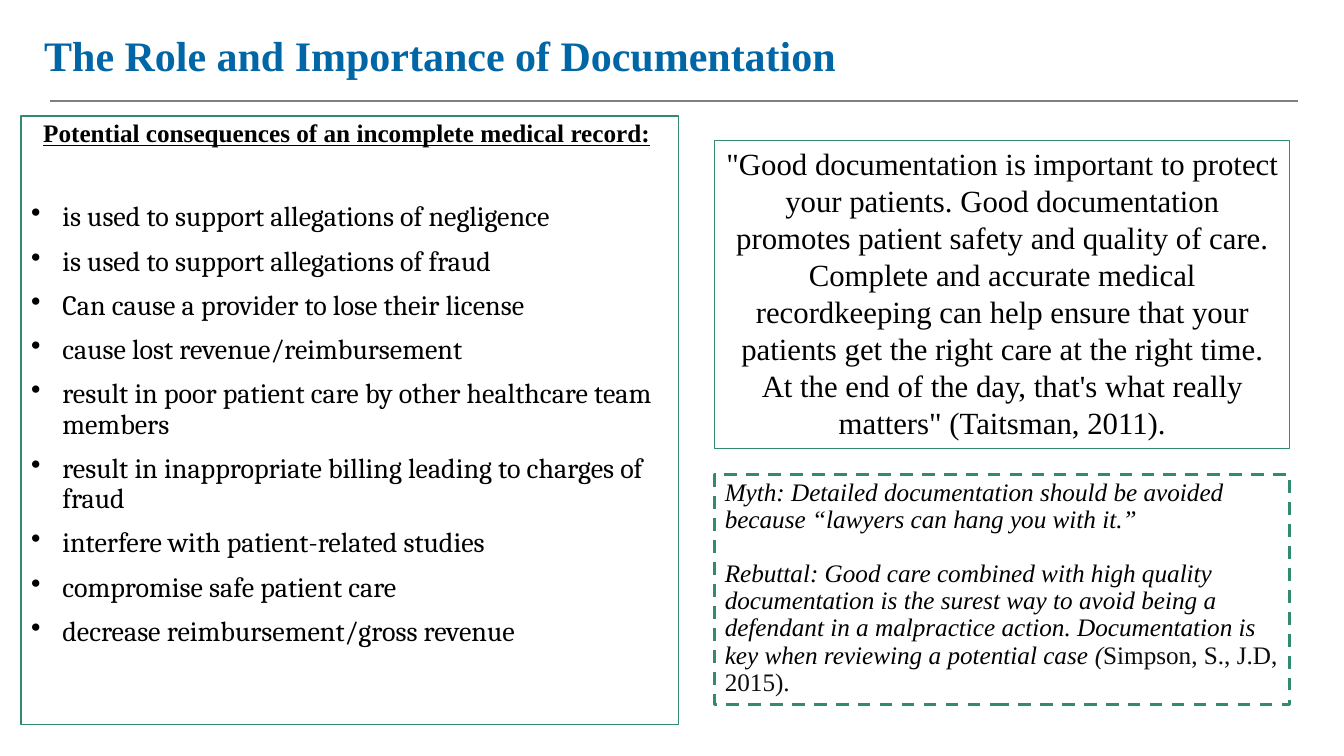
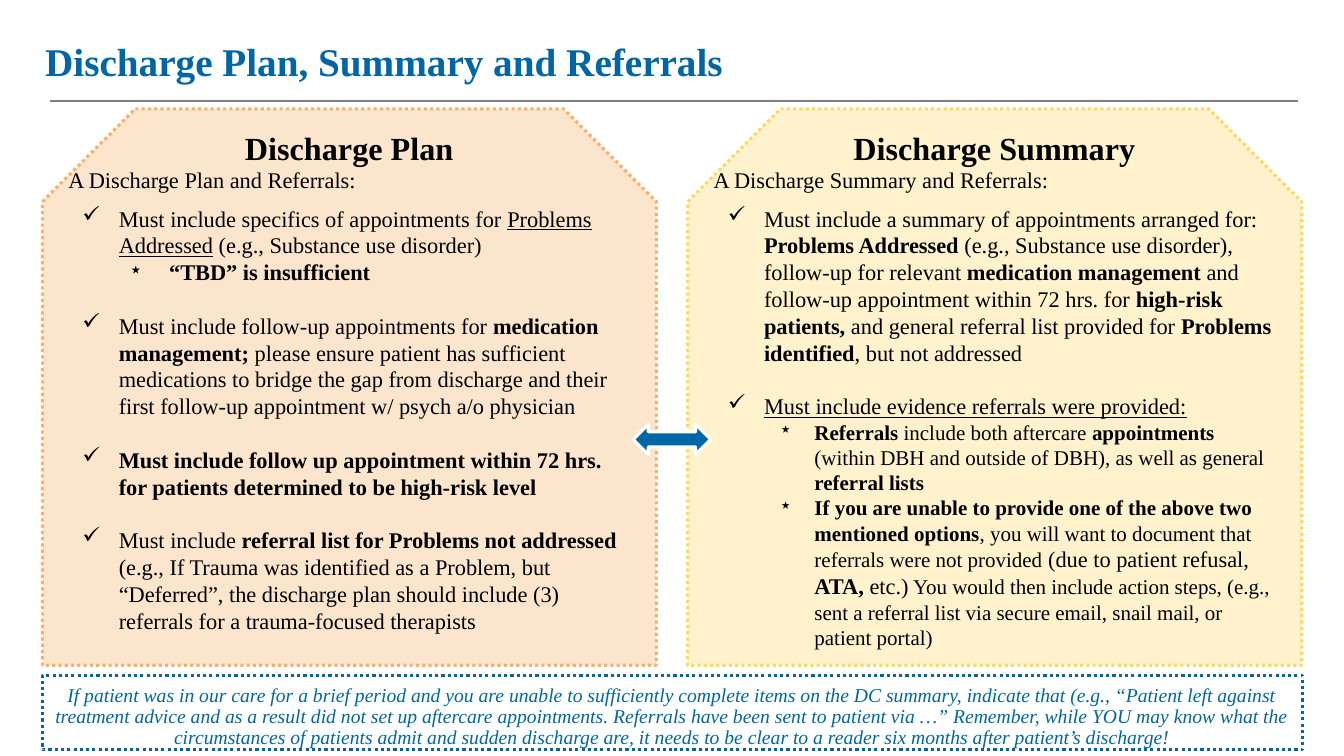
"""Build two slides on clinical documentation and discharge planning."""
from collections import namedtuple
from dataclasses import dataclass

from lxml import etree
from pptx import Presentation
from pptx.dml.color import RGBColor
from pptx.enum.dml import MSO_LINE
from pptx.enum.shapes import MSO_CONNECTOR, MSO_SHAPE
from pptx.enum.text import MSO_ANCHOR, PP_ALIGN
from pptx.oxml.ns import qn
from pptx.util import Inches, Pt

Box = namedtuple("Box", "left top width height")
Run = namedtuple("Run", "text marks size", defaults=("", None))


@dataclass(frozen=True)
class Theme:
    """Colours, fonts and type sizes of the deck."""
    blue: str = "0066A6"
    green: str = "328B71"
    gray: str = "7F7F7F"
    black: str = "000000"
    near_black: str = "0D0D0D"
    white: str = "FFFFFF"
    peach: str = "FCE5CD"
    orange: str = "F6B26B"
    cream: str = "FFF2CC"
    yellow: str = "FFD966"
    serif: str = "Times New Roman"
    list_font: str = "Cambria"
    panel_title: int = 23
    quote: int = 22
    consequence: int = 20
    subhead: int = 18
    body: int = 16
    detail: int = 15
    note: int = 14


@dataclass(frozen=True)
class Para:
    """One paragraph: its runs, type and spacing."""
    runs: tuple
    size: int
    font: str = "Times New Roman"
    color: str = "000000"
    bullet: str = ""
    margin: float = 0
    hanging: float = 0
    level: int = 0
    before: float = 0
    spacing: float = 1.0
    align: PP_ALIGN = PP_ALIGN.LEFT


THEME = Theme()


def rgb(code):
    """Turn a hex code into a colour."""
    return RGBColor.from_string(code)


def place(box):
    """Turn a box in inches into lengths."""
    return [Inches(side) for side in box]


def add_bullet(props, mark):
    """Give paragraph properties a black bullet character."""
    tint = etree.SubElement(props, qn("a:buClr"))
    etree.SubElement(tint, qn("a:srgbClr"), val=THEME.black)
    etree.SubElement(props, qn("a:buChar"), char=mark)


def write(frame, paras, inset=0.05, anchor=MSO_ANCHOR.TOP):
    """Fill a text frame with paragraphs, run by run."""
    frame.word_wrap = True
    frame.vertical_anchor = anchor
    frame.margin_left = frame.margin_right = Inches(0.1)
    frame.margin_top = frame.margin_bottom = Inches(inset)
    for index, para in enumerate(paras):
        line = frame.add_paragraph() if index else frame.paragraphs[0]
        line.alignment = para.align
        line.level = para.level
        line.line_spacing = para.spacing
        line.space_before = Pt(para.before)
        props = line._p.get_or_add_pPr()
        props.set("marL", str(Inches(para.margin)))
        props.set("indent", str(-Inches(para.hanging)))
        if para.bullet:
            add_bullet(props, para.bullet)
        for piece in para.runs:
            run = line.add_run()
            run.text = piece.text
            font = run.font
            font.name = para.font
            font.size = Pt(piece.size or para.size)
            font.bold = "b" in piece.marks
            font.italic = "i" in piece.marks
            font.underline = "u" in piece.marks
            font.color.rgb = rgb(THEME.near_black if "n" in piece.marks else para.color)


def add_figure(slide, kind, box, edge, weight, dash=None, fill=None):
    """Add a shadowless preset shape with an outline."""
    figure = slide.shapes.add_shape(kind, *place(box))
    figure.shadow.inherit = False
    if fill:
        figure.fill.solid()
        figure.fill.fore_color.rgb = rgb(fill)
    else:
        figure.fill.background()
    figure.line.color.rgb = rgb(edge)
    figure.line.width = Pt(weight)
    if dash:
        figure.line.dash_style = dash
    return figure


def add_text(slide, box, paras, **options):
    """Add a plain text box."""
    write(slide.shapes.add_textbox(*place(box)).text_frame, paras, **options)


def start_slide(deck, title, box, size):
    """Add a blank slide with the header rule and a title."""
    slide = deck.slides.add_slide(deck.slide_layouts[6])
    rule = slide.shapes.add_connector(
        MSO_CONNECTOR.STRAIGHT, Inches(12.87), Inches(1), Inches(0.5), Inches(1))
    rule.line.color.rgb = rgb(THEME.gray)
    rule.line.width = Pt(1.5)
    etree.SubElement(rule._element.spPr, qn("a:effectLst"))
    heading = Para((Run(title, "b"),), size, color=THEME.blue, spacing=0.9)
    add_text(slide, box, [heading], anchor=MSO_ANCHOR.MIDDLE)
    return slide


def add_consequences(slide, box, heading, items):
    """Add the framed list of consequences."""
    frame = add_figure(slide, MSO_SHAPE.RECTANGLE, box, THEME.green, 1).text_frame
    paras = [Para((Run(heading, "bu"),), THEME.subhead, margin=0.5, hanging=0.38, spacing=0.9)]
    for index, item in enumerate(items):
        paras.append(Para((Run(item),), THEME.consequence, THEME.list_font, bullet="•",
                          margin=0.31, hanging=0.31, spacing=0.9,
                          before=10 if index else 39))
    write(frame, paras)


def add_quote(slide, box, quote):
    """Add the framed, centred quotation."""
    frame = add_figure(slide, MSO_SHAPE.RECTANGLE, box, THEME.green, 0.75).text_frame
    write(frame, [Para((Run(quote),), THEME.quote, align=PP_ALIGN.CENTER)])


def add_myth(slide, box, myth, rebuttal):
    """Add the dashed box with a myth and its rebuttal."""
    frame = add_figure(slide, MSO_SHAPE.RECTANGLE, box, THEME.green, 2.25, MSO_LINE.DASH).text_frame
    write(frame, [Para((Run(myth, "i"),), THEME.subhead, spacing=0.9),
                  Para(rebuttal, THEME.subhead, spacing=0.9, before=19)])


def check(*runs, before=19):
    """Make a ticked requirement."""
    return Para(runs, THEME.body, bullet="✓", margin=0.5, hanging=0.36, before=before)


def star(*runs, size, hanging):
    """Make a starred detail under a requirement."""
    return Para(runs, size, bullet="⋆", margin=1, hanging=hanging, level=1)


def add_panel(slide, box, fill, edge, title, lead, requirements):
    """Add a snipped panel with its title, lead line and requirements."""
    panel = add_figure(slide, MSO_SHAPE.SNIP_2_SAME_RECTANGLE, box, edge, 2.25,
                       MSO_LINE.ROUND_DOT, fill)
    panel.adjustments[0] = 0.167
    panel.adjustments[1] = 0
    inner = Box(box.left + 0.16, box.top + 0.09, box.width - 0.32, box.height - 0.19)
    opening = [Para((Run(title, "b"),), THEME.panel_title, align=PP_ALIGN.CENTER),
               Para((Run(lead),), THEME.body)]
    add_text(slide, inner, opening + requirements, inset=0.1)


def add_note(slide, box, note):
    """Add the dotted note along the bottom."""
    frame = add_figure(slide, MSO_SHAPE.RECTANGLE, box, THEME.blue, 2.25,
                       MSO_LINE.ROUND_DOT).text_frame
    write(frame, [Para((Run(note, "i"),), THEME.note, color=THEME.blue, spacing=0.9,
                       align=PP_ALIGN.CENTER)], inset=0.1)


def build_documentation(deck):
    """Build the slide on the importance of documentation."""
    slide = start_slide(deck, "The Role and Importance of Documentation",
                        Box(0.34, 0.17, 10.38, 0.8), 30)
    add_consequences(slide, Box(0.21, 1.15, 6.52, 6.04),
                     "Potential consequences of an incomplete medical record:", [
                         "is used to support allegations of negligence",
                         "is used to support allegations of fraud",
                         "Can cause a provider to lose their license",
                         "cause lost revenue/reimbursement",
                         "result in poor patient care by other healthcare team members",
                         "result in inappropriate billing leading to charges of fraud",
                         "interfere with patient-related studies",
                         "compromise safe patient care",
                         "decrease reimbursement/gross revenue"])
    add_myth(slide, Box(7.09, 4.71, 5.7, 2.28),
             "Myth: Detailed documentation should be avoided because "
             "“lawyers can hang you with it.”",
             (Run("Rebuttal: Good care combined with high quality documentation is the "
                  "surest way to avoid being a defendant in a malpractice action. "
                  "Documentation is key when reviewing a potential case ", "i"),
              Run("(", "in"),
              Run("Simpson, S., J.D, 2015).", "n")))
    add_quote(slide, Box(7.09, 1.39, 5.7, 3.06),
              "\"Good documentation is important to protect your patients. Good "
              "documentation promotes patient safety and quality of care. Complete and "
              "accurate medical recordkeeping can help ensure that your patients get the "
              "right care at the right time. At the end of the day, that's what "
              "really matters\" (Taitsman, 2011).")


def build_discharge(deck):
    """Build the slide comparing discharge plan and summary."""
    slide = start_slide(deck, "Discharge Plan, Summary and Referrals",
                        Box(0.35, 0.23, 10.65, 0.8), 28)
    plan = [
        check(Run("Must include specifics of appointments for "),
              Run("Problems Addressed", "u"),
              Run(" (e.g., Substance use disorder)"), before=8),
        star(Run("“TBD” is insufficient", "b"), size=THEME.body, hanging=0.4),
        check(Run("Must include follow-up appointments for "),
              Run("medication management; ", "b"),
              Run("please ensure patient has sufficient medications to bridge the gap from "
                  "discharge and their first follow-up appointment w/ psych a/o physician")),
        check(Run("Must include follow up appointment within 72 hrs. for patients "
                  "determined to be high-risk level", "b")),
        check(Run("Must include "),
              Run("referral list for Problems not addressed ", "b"),
              Run("(e.g., If Trauma was identified as a Problem, but “Deferred”, the "
                  "discharge plan should include (3) referrals for a trauma-focused "
                  "therapists"))]
    summary = [
        check(Run("Must include a summary of appointments arranged for: "),
              Run("Problems Addressed ", "b"),
              Run("(e.g., Substance use disorder), follow-up for relevant "),
              Run("medication management ", "b"),
              Run("and follow-up appointment within 72 hrs. for "),
              Run("high-risk patients, ", "b"),
              Run("and general referral list provided for "),
              Run("Problems identified", "b"),
              Run(", but not addressed"), before=8),
        check(Run("Must include evidence referrals were provided:", "u")),
        star(Run("Referrals", "b"),
             Run(" include both aftercare "),
             Run("appointments", "b"),
             Run(" (within DBH and outside of DBH), as well as general "),
             Run("referral lists", "b"), size=THEME.detail, hanging=0.35),
        star(Run("If you are unable to provide one of the above two mentioned options", "b"),
             Run(", you will want to document that referrals were not provided"),
             Run(" (due to patient refusal, ", size=THEME.body),
             Run("ATA, ", "b", THEME.body),
             Run("etc.)", size=THEME.body),
             Run(" You would then include action steps, (e.g., sent a referral list via "
                 "secure email, snail mail, or patient portal)"),
             size=THEME.detail, hanging=0.35)]
    add_panel(slide, Box(0.42, 1.08, 6.09, 5.52), THEME.peach, THEME.orange,
              "Discharge Plan", "A Discharge Plan and Referrals:", plan)
    add_panel(slide, Box(6.82, 1.08, 6.09, 5.52), THEME.cream, THEME.yellow,
              "Discharge Summary", "A Discharge Summary and Referrals:", summary)
    add_note(slide, Box(0.42, 6.7, 12.5, 0.74),
             "If patient was in our care for a brief period and you are unable to "
             "sufficiently complete items on the DC summary, indicate that (e.g., “Patient "
             "left against treatment advice and as a result did not set up aftercare "
             "appointments. Referrals have been sent to patient via …” Remember, while YOU "
             "may know what the circumstances of patients admit and sudden discharge are, "
             "it needs to be clear to a reader six months after patient’s discharge!")
    add_figure(slide, MSO_SHAPE.LEFT_RIGHT_ARROW, Box(6.28, 4.21, 0.77, 0.3),
               THEME.white, 2.25, fill=THEME.blue)


def main():
    """Build and save the deck."""
    deck = Presentation()
    deck.slide_width, deck.slide_height = Inches(13.33), Inches(7.5)
    build_documentation(deck)
    build_discharge(deck)
    deck.save("out.pptx")


if __name__ == "__main__":
    main()
